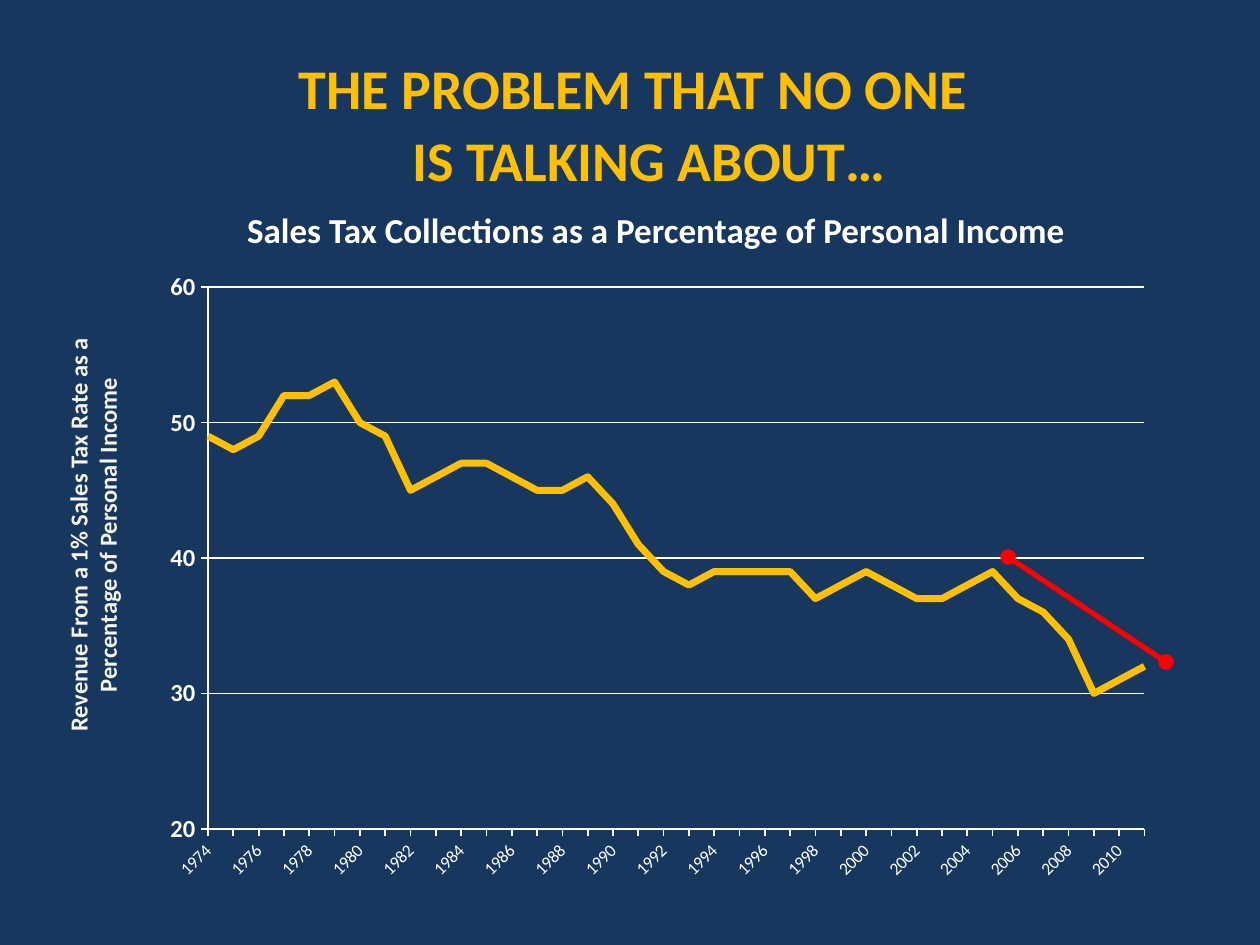
from dataclasses import dataclass
from lxml import etree
from pptx import Presentation, util as u
from pptx.chart.data import CategoryChartData
from pptx.dml.color import RGBColor
from pptx.enum import chart as ch, shapes, text
from pptx.oxml import ns


@dataclass(frozen=True)
class Theme:
    font: str = "Calibri"
    back: str = "17375E"
    gold: str = "FFC000"
    white: str = "FFFFFF"
    cream: str = "F5F4ED"
    red: str = "FF0000"
    head: int = 32
    sub: int = 20
    axis: int = 14
    year: int = 10


T = Theme()
START = 1974
RATES = [49, 48, 49, 52, 52, 53, 50, 49, 45, 46, 47, 47, 46, 45, 45, 46, 44, 41, 39,
         38, 39, 39, 39, 39, 37, 38, 39, 38, 37, 37, 38, 39, 37, 36, 34, 30, 31, 32]


def px(n):
    return u.Emu(round(n * 914400 / 126))


def rgb(code):
    return RGBColor.from_string(code)


def sub(node, tag, **attrs):
    return etree.SubElement(node, ns.qn(tag), attrs)


def style(font, size, color, bold=False):
    font.name, font.size, font.bold = T.font, u.Pt(size), bold
    font.color.rgb = rgb(color)


def stroke(line, color, width):
    line.color.rgb = rgb(color)
    line.width = u.Pt(width)


def add_box(slide, x, y, w, h, inset=0, vert=None):
    frame = slide.shapes.add_textbox(px(x), px(y), px(w), px(h)).text_frame
    frame.word_wrap = True
    frame.margin_left = frame.margin_right = 0
    frame.margin_top = frame.margin_bottom = px(inset)
    if vert:
        frame._txBody.bodyPr.set("vert", vert)
    return frame


def add_text(frame, words, size, color, pitch=None, indent=0):
    """Add one bold, centred paragraph; the first fills the empty one."""
    para = frame.paragraphs[0]
    if para.runs:
        para = frame.add_paragraph()
    para.alignment = text.PP_ALIGN.CENTER
    if pitch:
        para.line_spacing = u.Pt(pitch)
    if indent:
        para._p.get_or_add_pPr().set("marL", str(px(indent)))
    run = para.add_run()
    run.text = words
    style(run.font, size, color, True)


def place_plot(chart, x, y, w, h):
    """Fix the inner plot area, in fractions of the chart."""
    area = chart._chartSpace.chart.plotArea
    for old in area.findall(ns.qn("c:layout")):
        area.remove(old)
    layout = etree.Element(ns.qn("c:layout"))
    area.insert(0, layout)
    man = sub(layout, "c:manualLayout")
    sub(man, "c:layoutTarget", val="inner")
    for key in ("xMode", "yMode"):
        sub(man, "c:" + key, val="edge")
    for key, val in zip("xywh", (x, y, w, h)):
        sub(man, "c:" + key, val=str(val))


def add_before(axis, mark, **items):
    """Put valued elements ahead of the named child of an axis."""
    node = axis._element.find(ns.qn(mark))
    for key, val in items.items():
        node.addprevious(etree.Element(ns.qn("c:" + key), val=val))


def add_graph(slide, x, y, w, h):
    data = CategoryChartData()
    data.categories = [str(START + i) for i in range(len(RATES))]
    data.add_series("Series 1", RATES)
    chart = slide.shapes.add_chart(ch.XL_CHART_TYPE.LINE, px(x), px(y),
                                   px(w), px(h), data).chart
    chart.has_legend = chart.has_title = False
    style(chart.font, T.year, T.white)
    plot = chart.plots[0]
    plot.vary_by_categories = False
    line = plot.series[0]
    line.smooth = False
    line.marker.style = ch.XL_MARKER_STYLE.NONE
    stroke(line.format.line, T.gold, 4)

    # Axes
    years, rates = chart.category_axis, chart.value_axis
    for axis, size, bold in ((years, T.year, False), (rates, T.axis, True)):
        axis.major_tick_mark = ch.XL_TICK_MARK.OUTSIDE
        axis.minor_tick_mark = ch.XL_TICK_MARK.NONE
        stroke(axis.format.line, T.white, 1)
        style(axis.tick_labels.font, size, T.white, bold)
    rates.minimum_scale, rates.maximum_scale, rates.major_unit = 20, 60, 10
    rates.has_major_gridlines = True
    stroke(rates.major_gridlines.format.line, T.white, 0.75)
    add_before(rates, "c:majorUnit", crossBetween="midCat")

    # Every second year, slanted
    years._element.txPr.find(ns.qn("a:bodyPr")).set("rot", "-2700000")
    add_before(years, "c:noMultiLvlLbl", tickLblSkip="2", tickMarkSkip="1")
    place_plot(chart, 0.06, 0.04, 0.92, 0.86)


def add_trend(slide, x1, y1, x2, y2):
    line = slide.shapes.add_connector(shapes.MSO_CONNECTOR.STRAIGHT,
                                      px(x1), px(y1), px(x2), px(y2))
    stroke(line.line, T.red, 3)
    for end in ("a:headEnd", "a:tailEnd"):
        sub(line.line._get_or_add_ln(), end, type="oval")
    sub(line._element.spPr, "a:effectLst")


def main():
    prs = Presentation()
    prs.slide_width, prs.slide_height = px(1260), px(945)
    slide = prs.slides.add_slide(prs.slide_layouts[6])
    slide.background.fill.solid()
    slide.background.fill.fore_color.rgb = rgb(T.back)

    # Heading
    head = add_box(slide, 100, 49, 1066, 204)
    add_text(head, "THE PROBLEM THAT NO ONE", T.head, T.gold, pitch=41)
    add_text(head, "IS TALKING ABOUT…", T.head, T.gold, pitch=41, indent=32)
    add_text(head, "Sales Tax Collections as a Percentage of Personal Income",
             T.sub, T.white, pitch=33, indent=46)

    # Axis caption
    side = add_box(slide, 63, 220, 84, 630, inset=6, vert="vert270")
    for words in ("Revenue From a 1% Sales Tax Rate as a",
                  "Percentage of Personal Income"):
        add_text(side, words, T.axis, T.cream)

    # Chart and trend
    add_graph(slide, 147, 262, 1018, 630)
    add_trend(slide, 1008, 557, 1166, 662)
    prs.save("out.pptx")


if __name__ == "__main__":
    main()
